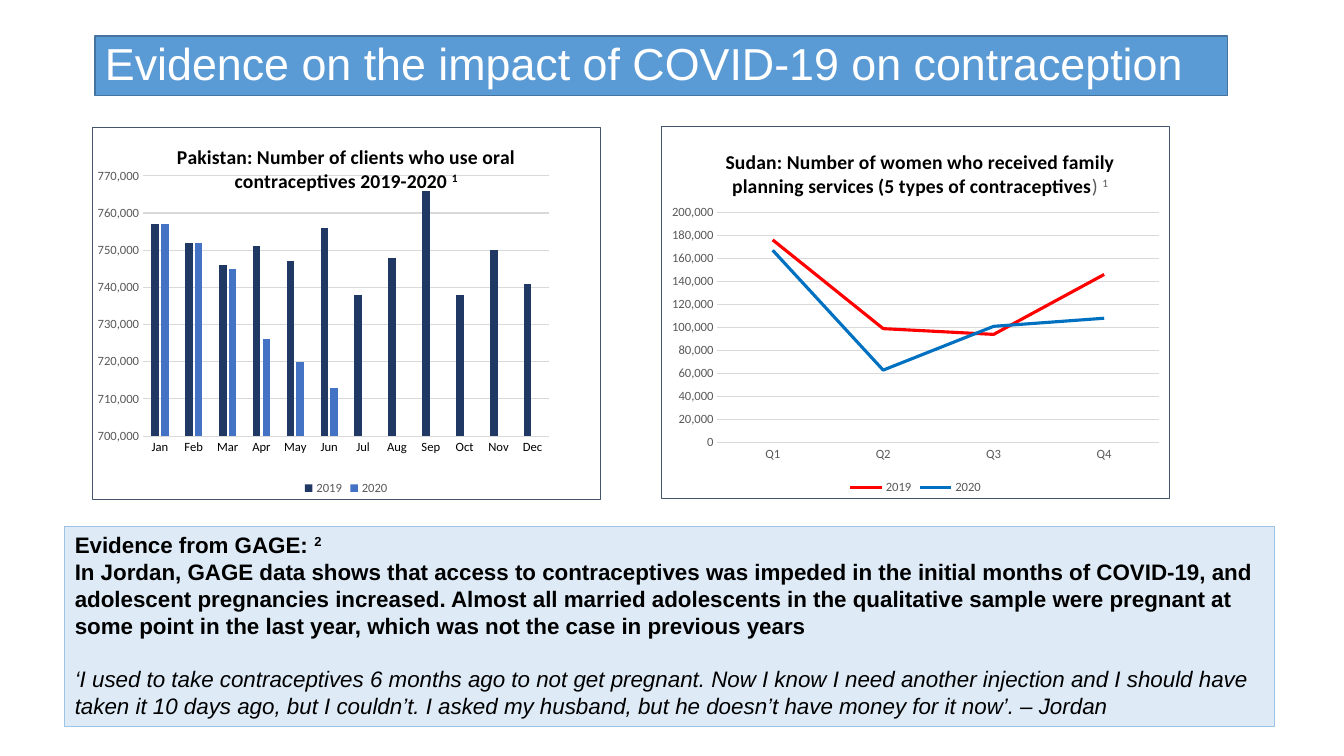
import pptx
import pptx.chart.data
import pptx.dml.color
import pptx.enum.chart
import pptx.enum.text
import pptx.oxml
import pptx.oxml.ns
import pptx.util
from dataclasses import dataclass

Cm = pptx.util.Cm
Pt = pptx.util.Pt
Kind = pptx.enum.chart.XL_CHART_TYPE
qn = pptx.oxml.ns.qn


@dataclass
class Theme:
    head: str = "Arial"
    plot: str = "Calibri"
    white: str = "FFFFFF"
    black: str = "000000"
    grey: str = "595959"
    rule: str = "D9D9D9"
    frame: str = "44546A"
    bar: str = "5B9BD5"
    edge: str = "43739E"
    pale: str = "DEEBF7"
    rim: str = "9DC3E6"
    navy: str = "203864"
    blue: str = "4472C4"
    red: str = "FF0000"
    azure: str = "0070C0"
    big: float = 32
    body: float = 16
    name: float = 14
    small: float = 9


class Deck:
    def __init__(self, show, theme):
        self.theme = theme
        self.slide = show.slides.add_slide(show.slide_layouts[1])

    def tint(self, text):
        return pptx.dml.color.RGBColor.from_string(text)

    def font(self, font, face, size, tone, bold=False):
        font.name = face
        font.size = Pt(size)
        font.bold = bold
        font.color.rgb = self.tint(tone)

    def line(self, line, tone, width):
        line.color.rgb = self.tint(tone)
        line.width = Pt(width)

    def words(self, par, text, raised=False):
        run = par.add_run()
        run.text = text
        if raised:
            run._r.get_or_add_rPr().set("baseline", "30000")
        return run

    def box(self, shape, area, fill, edge, width):
        shape.left, shape.top, shape.width, shape.height = map(Cm, area)
        shape.fill.solid()
        shape.fill.fore_color.rgb = self.tint(fill)
        self.line(shape.line, edge, width)
        frame = shape.text_frame
        frame.word_wrap = True
        frame.auto_size = pptx.enum.text.MSO_AUTO_SIZE.NONE
        return frame

    def title(self, text, area):
        t = self.theme
        frame = self.box(self.slide.shapes.title, area, t.bar, t.edge, 1)
        frame.vertical_anchor = pptx.enum.text.MSO_ANCHOR.MIDDLE
        par = frame.paragraphs[0]
        self.words(par, text)
        par.alignment = pptx.enum.text.PP_ALIGN.LEFT
        par.line_spacing = 0.9
        self.font(par.font, t.head, t.big, t.white)

    def body(self, rows, area):
        t = self.theme
        frame = self.box(self.slide.placeholders[1], area, t.pale, t.rim, 0.75)
        for i, (text, mark, quote) in enumerate(rows):
            par = frame.add_paragraph() if i else frame.paragraphs[0]
            self.words(par, text)
            if mark:
                self.words(par, mark, True)
            self.font(par.font, t.head, t.body, t.black, not quote)
            par.font.italic = quote
            par.space_before = Pt(19 if quote else 0)
            props = par._p.get_or_add_pPr()
            props.set("marL", "0")
            props.set("indent", "0")
            props.insert_element_before(
                pptx.oxml.parse_xml(f"<a:buNone {pptx.oxml.ns.nsdecls('a')}/>"),
                "a:tabLst", "a:defRPr", "a:extLst")

    def place(self, part, index, spots):
        for old in part.findall(qn("c:layout")):
            part.remove(old)
        modes = "".join(f'<c:{k}Mode val="edge"/>' for k in "xy")
        sizes = "".join(f'<c:{k} val="{v}"/>' for k, v in zip("xywh", spots))
        inner = '<c:layoutTarget val="inner"/>' if len(spots) == 4 else ""
        part.insert(index, pptx.oxml.parse_xml(
            f"<c:layout {pptx.oxml.ns.nsdecls('c')}><c:manualLayout>"
            f"{inner}{modes}{sizes}</c:manualLayout></c:layout>"))

    def chart(self, kind, area, name, tail, cats, rows, low, high, step, tone, plot, spot=None):
        t = self.theme
        data = pptx.chart.data.CategoryChartData(number_format="#,##0")
        data.categories = cats
        for year, vals, _ in rows:
            data.add_series(year, vals)
        chart = self.slide.shapes.add_chart(kind, *map(Cm, area), data).chart
        self.font(chart.font, t.plot, t.small, t.grey)
        chart.has_legend = True
        chart.legend.position = pptx.enum.chart.XL_LEGEND_POSITION.BOTTOM
        chart.legend.include_in_layout = False
        self.font(chart.legend.font, t.plot, t.small, t.grey)

        par = chart.chart_title.text_frame.paragraphs[0]
        self.font(par.font, t.plot, t.name, t.black, True)
        self.words(par, name)
        ends = [self.words(par, tail), self.words(par, "1", True)]
        if tail.strip():
            for run in ends:
                self.font(run.font, t.plot, t.name, t.grey)
        if spot:
            self.place(chart.chart_title._element, 1, spot)
        self.place(chart._chartSpace.chart.plotArea, 0, plot)

        none = pptx.enum.chart.XL_TICK_MARK.NONE
        for axis, shade in ((chart.category_axis, tone), (chart.value_axis, t.grey)):
            axis.major_tick_mark = axis.minor_tick_mark = none
            self.font(axis.tick_labels.font, t.plot, t.small, shade)
        self.line(chart.category_axis.format.line, t.rule, 0.75)
        axis = chart.value_axis
        axis.format.line.fill.background()
        axis.minimum_scale, axis.maximum_scale, axis.major_unit = low, high, step
        axis.has_major_gridlines = True
        self.line(axis.major_gridlines.format.line, t.rule, 0.75)
        axis.tick_labels.number_format = "#,##0"
        axis.tick_labels.number_format_is_linked = False

        group = chart.plots[0]
        group.vary_by_categories = False
        bars = kind == Kind.COLUMN_CLUSTERED
        if bars:
            group.gap_width, group.overlap = 219, -27
        for line, (_, _, shade) in zip(group.series, rows):
            if bars:
                line.format.fill.solid()
                line.format.fill.fore_color.rgb = self.tint(shade)
            else:
                line.smooth = False
                self.line(line.format.line, shade, 2.25)
        chart._chartSpace.chart.addnext(pptx.oxml.parse_xml(
            f"<c:spPr {pptx.oxml.ns.nsdecls('c', 'a')}><a:solidFill>"
            f'<a:srgbClr val="{t.white}"/></a:solidFill><a:ln w="{Pt(0.75)}">'
            f'<a:solidFill><a:srgbClr val="{t.frame}"/></a:solidFill></a:ln></c:spPr>'))


def main():
    show = pptx.Presentation()
    show.slide_width, show.slide_height = Cm(33.87), Cm(19.05)
    t = Theme()
    deck = Deck(show, t)
    deck.title("Evidence on the impact of COVID-19 on contraception", (2.39, 0.91, 28.55, 1.5))
    deck.body([
        ("Evidence from GAGE: ", "2", False),
        ("In Jordan, GAGE data shows that access to contraceptives was impeded in the initial "
         "months of COVID-19, and adolescent pregnancies increased. Almost all married adolescents "
         "in the qualitative sample were pregnant at some point in the last year, which was not "
         "the case in previous years", "", False),
        ("‘I used to take contraceptives 6 months ago to not get pregnant. Now I know I need "
         "another injection and I should have taken it 10 days ago, but I couldn’t. I asked my "
         "husband, but he doesn’t have money for it now’. – Jordan", "", True),
    ], (1.63, 13.26, 30.48, 5.05))
    months = "Jan Feb Mar Apr May Jun Jul Aug Sep Oct Nov Dec".split()
    deck.chart(
        Kind.COLUMN_CLUSTERED, (2.31, 3.2, 12.83, 9.4),
        "Pakistan: Number of clients who use oral contraceptives 2019-2020", " ", months,
        [("2019", [757000, 752000, 746000, 751000, 747000, 756000,
                   738000, 748000, 766000, 738000, 750000, 741000], t.navy),
         ("2020", [757000, 752000, 745000, 726000, 720000, 713000] + [None] * 6, t.blue)],
        700000, 770000, 10000, t.black, (0.1, 0.13, 0.8, 0.7))
    deck.chart(
        Kind.LINE, (16.66, 3.18, 12.83, 9.4),
        "Sudan: Number of women who received family planning services (5 types of contraceptives",
        ") ", ["Q1", "Q2", "Q3", "Q4"],
        [("2019", [176000, 99000, 94000, 146000], t.red),
         ("2020", [167000, 63000, 101000, 108000], t.azure)],
        0, 200000, 20000, t.grey, (0.11, 0.23, 0.87, 0.62), (0.12, 0.05))
    show.save("out.pptx")


if __name__ == "__main__":
    main()
